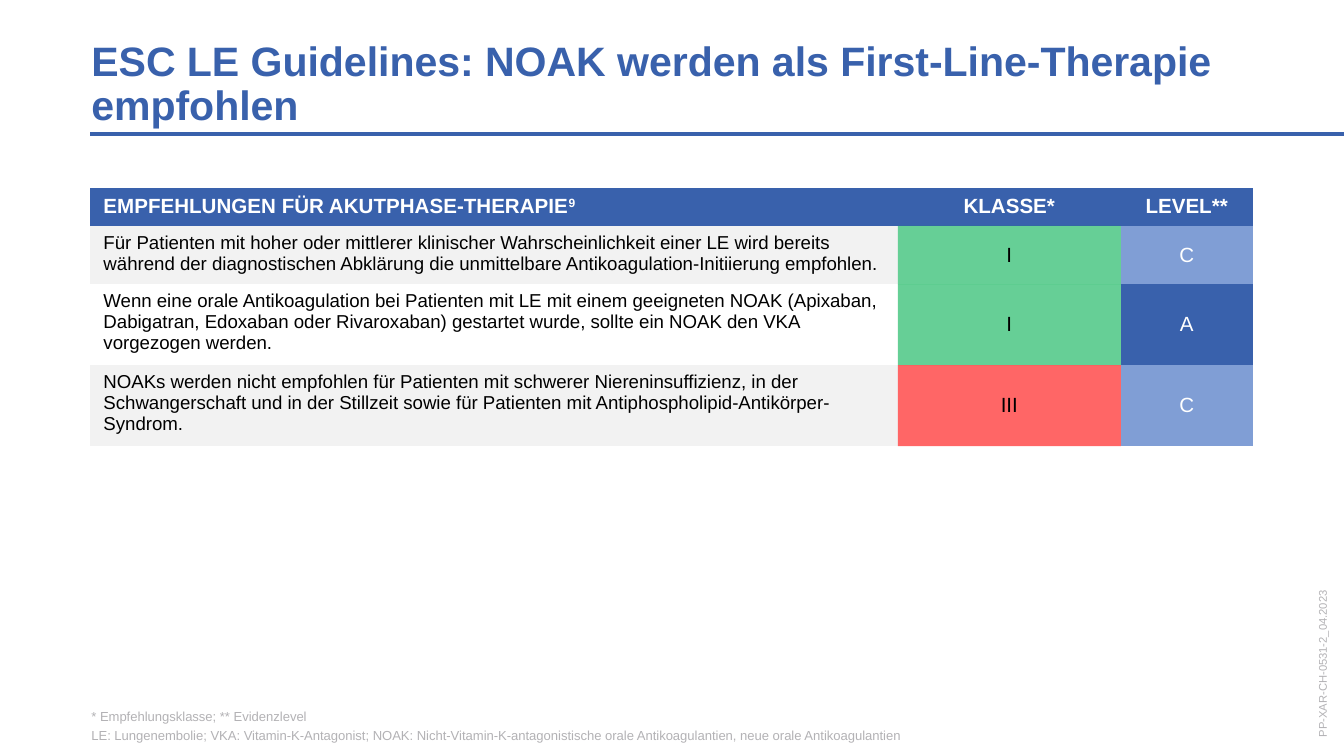
import pptx
import pptx.dml.color
import pptx.enum.shapes
import pptx.enum.text
import pptx.oxml
import pptx.oxml.ns
import pptx.util

FONT = "Arial"
COLORS = {
    "blue": "3961AC", "light_blue": "809ED5", "green": "00B050",
    "red": "FF0000", "band": "F2F2F2", "grey": "B3B2B5",
    "white": "FFFFFF", "black": "000000",
}
SLIDE_WIDTH = pptx.util.Inches(10)
SLIDE_HEIGHT = SLIDE_WIDTH * 9 // 16
GRID_UNIT = SLIDE_WIDTH / 100  # columns and rows are square
NO_STYLE_NO_GRID = "{2D5ABB26-0587-4C30-8999-92F81FD0307C}"

ALIGN = pptx.enum.text.PP_ALIGN
ANCHOR = pptx.enum.text.MSO_ANCHOR

HEADINGS = [("EMPFEHLUNGEN FÜR AKUTPHASE-THERAPIE", "9"), ("KLASSE*", ""), ("LEVEL**", "")]
RECOMMENDATIONS = [
    ("Für Patienten mit hoher oder mittlerer klinischer Wahrscheinlichkeit einer LE wird bereits "
     "während der diagnostischen Abklärung die unmittelbare Antikoagulation-Initiierung empfohlen.",
     "I", "C"),
    ("Wenn eine orale Antikoagulation bei Patienten mit LE mit einem geeigneten NOAK (Apixaban, "
     "Dabigatran, Edoxaban oder Rivaroxaban) gestartet wurde, sollte ein NOAK den VKA "
     "vorgezogen werden.", "I", "A"),
    ("NOAKs werden nicht empfohlen für Patienten mit schwerer Niereninsuffizienz, in der "
     "Schwangerschaft und in der Stillzeit sowie für Patienten mit "
     "Antiphospholipid-Antikörper-Syndrom.", "III", "C"),
]
COLUMN_WEIGHTS = (60.1, 16.6, 9.8)
ROW_WEIGHTS = (2.8, 4.34, 6.03, 6.03)
CLASS_COLORS = {"I": "green", "III": "red"}
LEVEL_COLORS = {"A": "blue", "C": "light_blue"}
FOOTNOTES = [
    "* Empfehlungsklasse; ** Evidenzlevel",
    "LE: Lungenembolie; VKA: Vitamin-K-Antagonist; NOAK: Nicht-Vitamin-K-antagonistische "
    "orale Antikoagulantien, neue orale Antikoagulantien",
]


def grid_box(left, top, width, height):
    """Turn grid columns and rows into left, top, width and height."""
    return [round(n * GRID_UNIT) for n in (left, top, width, height)]


def split(length, weights):
    """Divide a length in proportion to the weights."""
    return [round(length * weight / sum(weights)) for weight in weights]


def rgb(color):
    return pptx.dml.color.RGBColor.from_string(COLORS[color])


def add_run(paragraph, text, size, color, bold=False):
    run = paragraph.add_run()
    run.text = text
    run.font.name = FONT
    run.font.size = pptx.util.Pt(size)
    run.font.bold = bold
    run.font.color.rgb = rgb(color)
    return run


def frame_text(shape, anchor):
    """Give a shape wrapped text without insets and return its text frame."""
    frame = shape.text_frame
    frame.word_wrap = True
    frame.auto_size = pptx.enum.text.MSO_AUTO_SIZE.NONE
    frame.vertical_anchor = anchor
    frame.margin_left = frame.margin_top = frame.margin_right = frame.margin_bottom = 0
    return frame


def place_title(slide, box):
    title = slide.shapes.title
    title.left, title.top, title.width, title.height = box
    heading = frame_text(title, ANCHOR.BOTTOM).paragraphs[0]
    heading.alignment = ALIGN.LEFT
    heading.line_spacing = 0.9
    add_run(heading, "ESC LE Guidelines: NOAK werden als First-Line-Therapie empfohlen",
            22, "blue", bold=True)


def place_title_rule(slide, box):
    left, top, width, height = box
    rule = slide.shapes.add_connector(pptx.enum.shapes.MSO_CONNECTOR.STRAIGHT,
                                      left, top, left + width, top + height)
    rule.line.color.rgb = rgb("blue")
    rule.line.width = pptx.util.Pt(2.25)
    rule._element.spPr.append(
        pptx.oxml.parse_xml(f'<a:effectLst {pptx.oxml.ns.nsdecls("a")}/>'))


def place_footnotes(slide, box):
    frame = frame_text(slide.shapes.add_textbox(*box), ANCHOR.BOTTOM)
    for index, footnote in enumerate(FOOTNOTES):
        paragraph = frame.add_paragraph() if index else frame.paragraphs[0]
        paragraph.space_after = pptx.util.Pt(2)
        add_run(paragraph, footnote, 7, "grey")


def place_document_code(slide, box):
    code = slide.shapes.add_textbox(*box)
    code.rotation = 270
    frame = frame_text(code, ANCHOR.MIDDLE)
    add_run(frame.paragraphs[0], "PP-XAR-CH-0531-2_04.2023", 6, "grey")


def fill_cell(cell, color, opacity=100):
    if color is None:
        cell.fill.background()
        return
    cell.fill.solid()
    cell.fill.fore_color.rgb = rgb(color)
    if opacity < 100:
        shade = cell._tc.tcPr.find(".//" + pptx.oxml.ns.qn("a:srgbClr"))
        shade.append(pptx.oxml.parse_xml(
            f'<a:alpha {pptx.oxml.ns.nsdecls("a")} val="{opacity * 1000}"/>'))


def write_grade(cell, grade, text_color):
    cell.vertical_anchor = ANCHOR.MIDDLE
    paragraph = cell.text_frame.paragraphs[0]
    paragraph.alignment = ALIGN.CENTER
    add_run(paragraph, grade, 11, text_color)


def place_recommendations(slide, box):
    width, height = box[2:]
    table = slide.shapes.add_table(len(RECOMMENDATIONS) + 1, len(HEADINGS), *box).table
    table.first_row = table.horz_banding = False
    table._tbl.tblPr.find(pptx.oxml.ns.qn("a:tableStyleId")).text = NO_STYLE_NO_GRID
    for column, column_width in zip(table.columns, split(width, COLUMN_WEIGHTS)):
        column.width = column_width
    for row, row_height in zip(table.rows, split(height, ROW_WEIGHTS)):
        row.height = row_height

    for index, (heading, reference) in enumerate(HEADINGS):
        cell = table.cell(0, index)
        fill_cell(cell, "blue")
        paragraph = cell.text_frame.paragraphs[0]
        paragraph.alignment = ALIGN.CENTER if index else ALIGN.LEFT
        add_run(paragraph, heading, 11, "white", bold=True)
        if reference:
            superscript = add_run(paragraph, reference, 11, "white", bold=True)
            superscript.font._element.set("baseline", "30000")

    for index, (advice, grade, level) in enumerate(RECOMMENDATIONS, start=1):
        advice_cell, class_cell, level_cell = (table.cell(index, i) for i in range(3))
        fill_cell(advice_cell, "band" if index % 2 else None)
        add_run(advice_cell.text_frame.paragraphs[0], advice, 10, "black")
        fill_cell(class_cell, CLASS_COLORS[grade], opacity=60)
        write_grade(class_cell, grade, "black")
        fill_cell(level_cell, LEVEL_COLORS[level])
        write_grade(level_cell, level, "white")


def main():
    deck = pptx.Presentation()
    deck.slide_width, deck.slide_height = SLIDE_WIDTH, SLIDE_HEIGHT
    slide = deck.slides.add_slide(deck.slide_layouts[5])
    place_document_code(slide, grid_box(91.4, 46.3, 14, 3.1))
    place_title_rule(slide, grid_box(6.7, 10, 93.3, 0))
    place_title(slide, grid_box(6.8, 2.95, 91.8, 6.7))
    place_footnotes(slide, grid_box(6.8, 52.7, 86.5, 2.6))
    place_recommendations(slide, grid_box(6.7, 14, 86.5, 19.2))
    deck.save("out.pptx")


if __name__ == "__main__":
    main()
